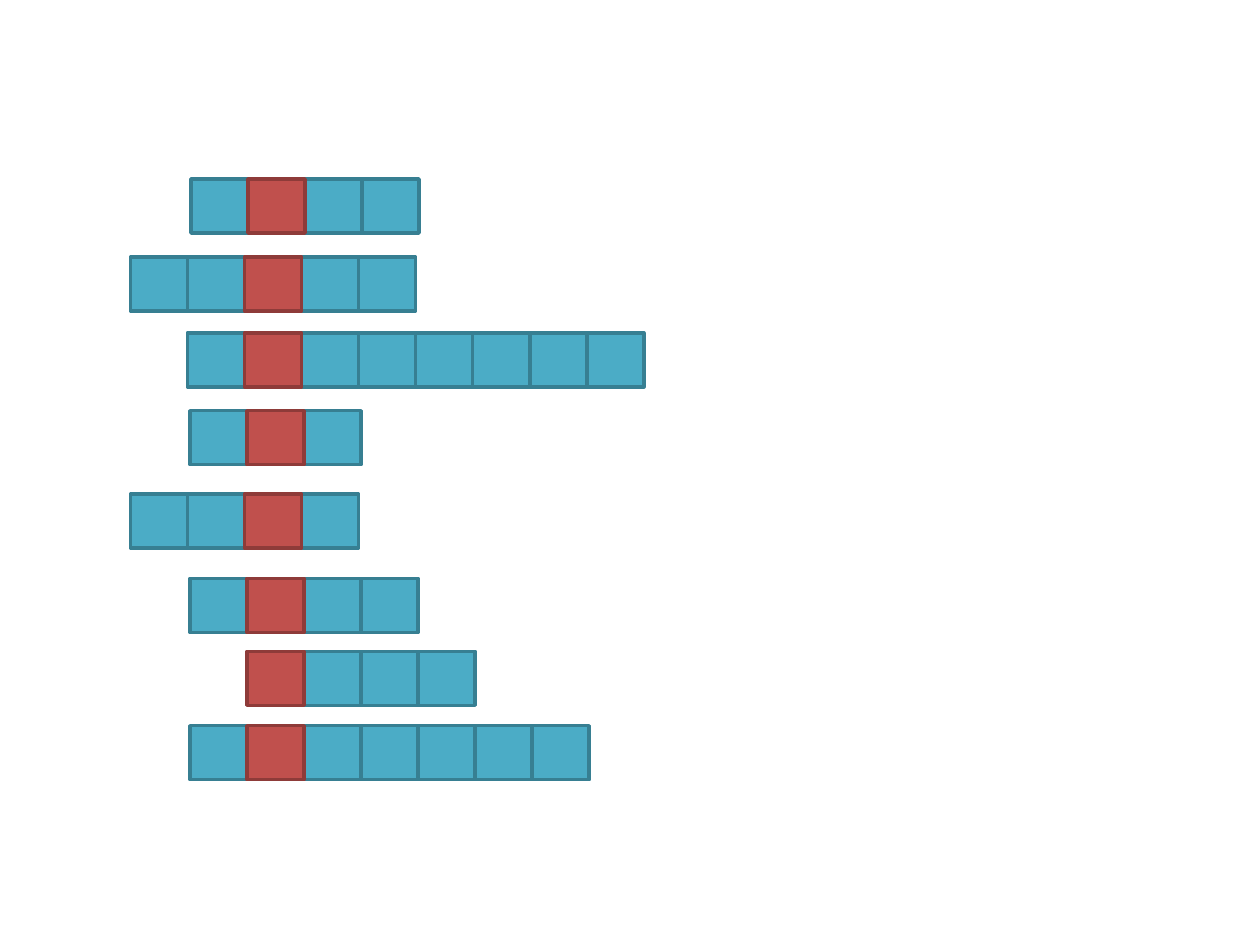
from pptx import Presentation
from pptx.dml.color import RGBColor
from pptx.enum.shapes import MSO_SHAPE
from pptx.util import Cm, Pt

CELL_W, CELL_H = 1.15, 1.09
BLUE = ("4BACC6", "377F92")
RED = ("C0504D", "8E3B39")

# top and left of the red cell in cm, blue cells before it, blue cells after it
ROWS = [
    (3.61, 5.00, 1, 2),
    (5.18, 4.93, 2, 2),
    (6.71, 4.93, 1, 6),
    (8.28, 4.98, 1, 1),
    (9.96, 4.93, 2, 1),
    (11.66, 4.98, 1, 2),
    (13.13, 4.98, 0, 3),
    (14.63, 4.98, 1, 5),
]


def add_cell(s, left, top, colors):
    fill, line = colors
    sp = s.shapes.add_shape(MSO_SHAPE.RECTANGLE, Cm(left), Cm(top), Cm(CELL_W), Cm(CELL_H))
    sp.shadow.inherit = False
    sp.fill.solid()
    sp.fill.fore_color.rgb = RGBColor.from_string(fill)
    sp.line.color.rgb = RGBColor.from_string(line)
    sp.line.width = Pt(2)


prs = Presentation()
prs.slide_width, prs.slide_height = Cm(25.4), Cm(19.05)
s = prs.slides.add_slide(prs.slide_layouts[6])

for top, red_left, before, after in ROWS:
    for i in range(-before, after + 1):
        if i != 0:
            add_cell(s, red_left + i * CELL_W, top, BLUE)
    # The red cell comes last so that its outline covers its neighbours
    add_cell(s, red_left, top, RED)

prs.save("out.pptx")
